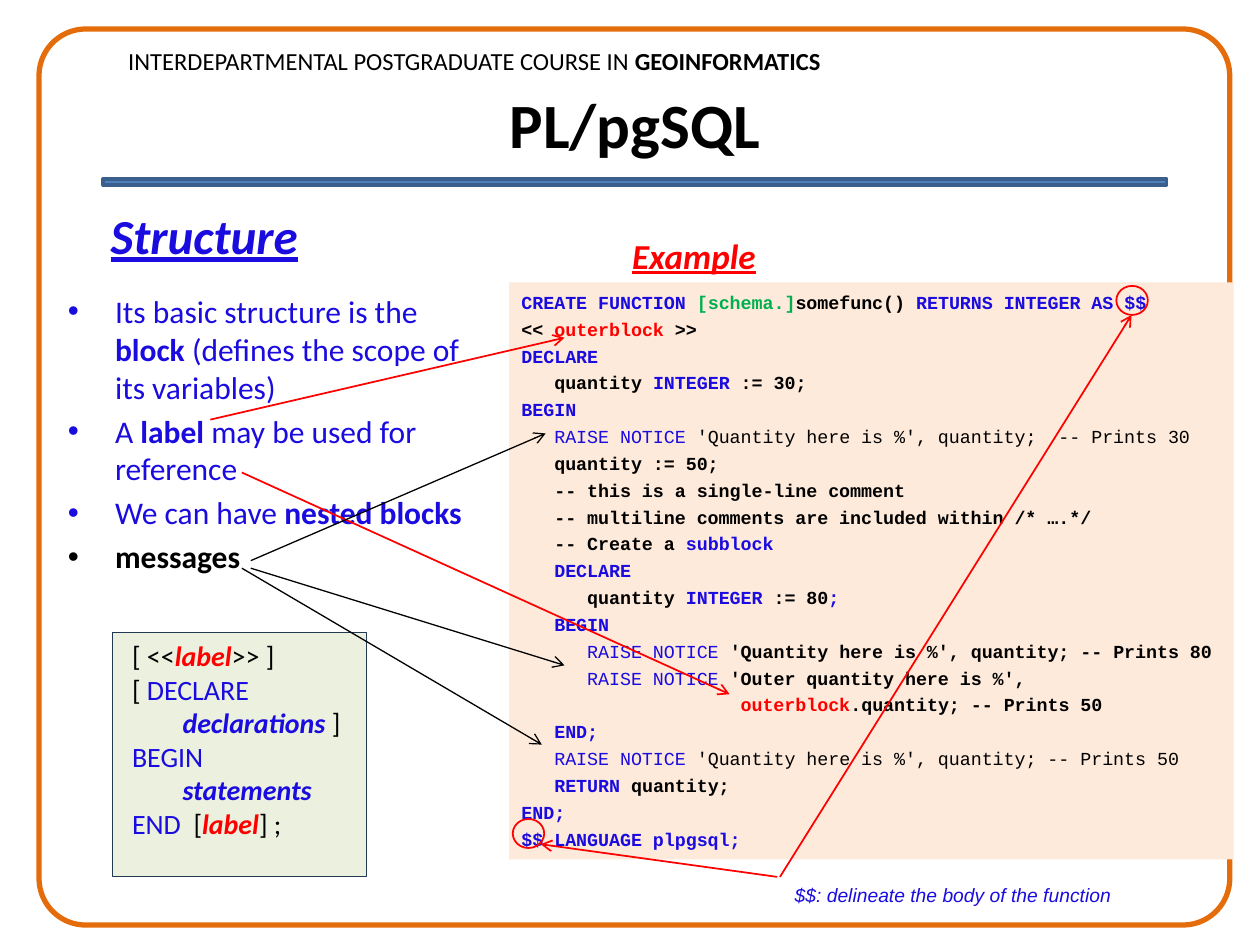
from typing import NamedTuple

from lxml import etree
from pptx import Presentation
from pptx.dml.color import RGBColor
from pptx.enum.shapes import MSO_CONNECTOR, MSO_SHAPE
from pptx.enum.text import MSO_ANCHOR, PP_ALIGN
from pptx.oxml.ns import qn
from pptx.util import Pt

STRAIGHT = MSO_CONNECTOR.STRAIGHT
RECT, ROUNDED, OVAL = MSO_SHAPE.RECTANGLE, MSO_SHAPE.ROUNDED_RECTANGLE, MSO_SHAPE.OVAL
LEFT, CENTER, RIGHT = PP_ALIGN.LEFT, PP_ALIGN.CENTER, PP_ALIGN.RIGHT
TOP, MIDDLE = MSO_ANCHOR.TOP, MSO_ANCHOR.MIDDLE

COLORS = {
    "black": "000000", "blue": "1A0BDF", "red": "FF0000", "green": "00B050",
    "orange": "E46C0A", "rule": "4F81BD", "rule_edge": "3A5F8C",
    "syntax": "EBF1DE", "syntax_edge": "233953", "code": "FDEADA",
}


class Style(NamedTuple):
    color: str
    bold: bool = False
    italic: bool = False


class Box(NamedTuple):
    left: float
    top: float
    width: float
    height: float


class Arrow(NamedTuple):
    start: tuple[float, float]
    end: tuple[float, float]
    color: str
    weight: float


Paragraph = list[tuple[str, Style]]

PLAIN, STRONG = Style("black"), Style("black", True)
BLUE, KEY = Style("blue"), Style("blue", True)
RED, GREEN = Style("red", True), Style("green", True)
NOTE, TERM, LABEL = Style("blue", False, True), Style("blue", True, True), Style("red", True, True)

SYNTAX: list[Paragraph] = [
    [("[ <<", PLAIN), ("label", LABEL), (">> ]", PLAIN)],
    [("[ ", PLAIN), ("DECLARE", BLUE)],
    [("        ", PLAIN), ("declarations", TERM), (" ]", PLAIN)],
    [("BEGIN", BLUE)],
    [("        ", BLUE), ("statements", TERM)],
    [("END  ", BLUE), ("[", PLAIN), ("label", LABEL), ("] ;", PLAIN)],
]
POINTS: list[Paragraph] = [
    [("Its basic structure is the ", BLUE), ("block ", KEY),
     ("(defines the scope of its variables)", BLUE)],
    [("A ", BLUE), ("label ", KEY), ("may be used for reference", BLUE)],
    [("We can have ", BLUE), ("nested blocks", KEY)],
    [("messages", STRONG)],
]
CODE: list[Paragraph] = [
    [("CREATE FUNCTION ", KEY), ("[schema.]", GREEN), ("somefunc() ", STRONG),
     ("RETURNS INTEGER AS $$", KEY)],
    [("<< ", STRONG), ("outerblock", RED), (" >>", STRONG)],
    [("DECLARE", KEY)],
    [("   quantity ", STRONG), ("INTEGER ", KEY), (":= 30;", STRONG)],
    [("BEGIN", KEY)],
    [("   RAISE NOTICE ", BLUE), ("'Quantity here is %', quantity;  -- Prints 30", PLAIN)],
    [("   quantity := 50;", STRONG)],
    [("   -- this is a single-line comment", STRONG)],
    [("   -- multiline comments are included within /* ….*/", STRONG)],
    [("   -- Create a ", STRONG), ("subblock", KEY)],
    [("   DECLARE", KEY)],
    [("      quantity", STRONG), (" INTEGER ", KEY), (":= 80", STRONG), (";", KEY)],
    [("   BEGIN", KEY)],
    [("      RAISE NOTICE ", BLUE), ("'Quantity here is %', quantity; -- Prints 80", STRONG)],
    [("      RAISE NOTICE ", BLUE), ("'Outer quantity here is %',", STRONG)],
    [("                    outerblock", RED), (".quantity; -- Prints 50", STRONG)],
    [("   END;", KEY)],
    [("   RAISE NOTICE", BLUE), (" 'Quantity here is %', quantity; -- Prints 50", PLAIN)],
    [("   RETURN", KEY), (" quantity;", STRONG)],
    [("END;", KEY)],
    [("$$ LANGUAGE plpgsql;", KEY)],
]
LABEL_AND_MESSAGE_ARROWS = [
    Arrow((120.2, 239.8), (322.6, 193), "red", 1),
    Arrow((138.2, 270), (416.9, 396.7), "red", 1),
    Arrow((143.3, 320.4), (311.8, 247.7), "black", 0.75),
    Arrow((138.2, 324.7), (309.6, 425.5), "black", 0.75),
    Arrow((143.3, 324.7), (322.6, 380.2), "black", 0.75),
]
DELIMITER_ARROWS = [
    Arrow((445.7, 501.1), (646.6, 180), "red", 1),
    Arrow((444.2, 501.1), (308.9, 482.4), "red", 1),
]
DELIMITER_RINGS = [Box(637.9, 163.4, 18, 16.6), Box(293, 468, 18, 16.6)]


def rgb(name: str) -> RGBColor:
    """Look up a named colour."""
    return RGBColor.from_string(COLORS[name])


def write_text(frame, paragraphs: list[Paragraph], *, size: float, font: str = "Calibri",
               align=LEFT, anchor=TOP, wrap: bool = True, underline: bool = False,
               gap: float = 0, bullet_indent: float = 0) -> None:
    """Fill a text frame with styled paragraphs."""
    frame.word_wrap = wrap
    frame.vertical_anchor = anchor
    for index, runs in enumerate(paragraphs):
        paragraph = frame.add_paragraph() if index else frame.paragraphs[0]
        if bullet_indent:
            properties = paragraph._p.get_or_add_pPr()
            properties.set("marL", str(Pt(bullet_indent)))
            properties.set("indent", str(-Pt(bullet_indent)))
            etree.SubElement(properties, qn("a:buFont")).set("typeface", "Arial")
            etree.SubElement(properties, qn("a:buChar")).set("char", "•")
        paragraph.alignment = align
        if index and gap:
            paragraph.space_before = Pt(gap)
        for text, style in runs:
            run = paragraph.add_run()
            run.text = text
            run.font.name, run.font.size = font, Pt(size)
            run.font.bold, run.font.italic = style.bold, style.italic
            run.font.underline = underline
            run.font.color.rgb = rgb(style.color)


def add_text(slide, box: Box, paragraphs: list[Paragraph], **text_format) -> None:
    """Place a text box and write into it."""
    write_text(slide.shapes.add_textbox(*map(Pt, box)).text_frame, paragraphs, **text_format)


def add_panel(slide, kind, box: Box, *, fill: str = "", edge: str = "", weight: float = 1):
    """Draw a preset shape with an optional fill and outline."""
    panel = slide.shapes.add_shape(kind, *map(Pt, box))
    panel.shadow.inherit = False
    if fill:
        panel.fill.solid()
        panel.fill.fore_color.rgb = rgb(fill)
    else:
        panel.fill.background()
    if edge:
        panel.line.color.rgb = rgb(edge)
        panel.line.width = Pt(weight)
    else:
        panel.line.fill.background()
    return panel


def add_arrow(slide, arrow: Arrow) -> None:
    """Draw a straight line with an open arrowhead at its end."""
    connector = slide.shapes.add_connector(
        STRAIGHT, *map(Pt, arrow.start), *map(Pt, arrow.end))
    connector.line.color.rgb = rgb(arrow.color)
    connector.line.width = Pt(arrow.weight)
    etree.SubElement(connector.line._get_or_add_ln(), qn("a:tailEnd")).set("type", "arrow")
    etree.SubElement(connector._element.spPr, qn("a:effectLst"))


def main() -> None:
    """Build the slide and save it."""
    deck = Presentation()
    deck.slide_width, deck.slide_height = Pt(720), Pt(540)
    slide = deck.slides.add_slide(deck.slide_layouts[6])

    add_text(slide, Box(66.2, 23, 413.3, 24.5),
             [[("INTERDEPARTMENTAL POSTGRADUATE COURSE IN ", PLAIN), ("GEOINFORMATICS", STRONG)]],
             size=14, wrap=False)
    add_panel(slide, RECT, Box(59, 102.2, 607.7, 3.6), fill="rule", edge="rule_edge", weight=2)
    border = add_panel(slide, ROUNDED, Box(22.3, 16.6, 680.4, 512), edge="orange", weight=3)
    border.adjustments[0] = 0.052
    add_panel(slide, RECT, Box(64.1, 361.4, 145.4, 139.7),
              fill="syntax", edge="syntax_edge", weight=0.75)
    add_text(slide, Box(38.9, 36, 648, 68.4), [[("PL/pgSQL", STRONG)]],
             size=36, align=CENTER, anchor=MIDDLE)
    add_text(slide, Box(68.4, 361.4, 185, 123.1), SYNTAX, size=16)
    add_text(slide, Box(56.2, 113.8, 141.8, 41), [[("Structure", TERM)]], size=28, underline=True)
    add_text(slide, Box(31.7, 163.4, 249.8, 221), POINTS, size=18, gap=3.5, bullet_indent=27)
    add_text(slide, Box(354.2, 130.3, 131.8, 31.7), [[("Example", LABEL)]],
             size=20, underline=True)
    listing = add_panel(slide, RECT, Box(290.9, 161.3, 414, 329.8), fill="code")
    listing.text_frame.margin_top = Pt(5)
    write_text(listing.text_frame, CODE, size=10.5, font="Courier New", gap=2.75)

    for arrow in LABEL_AND_MESSAGE_ARROWS:
        add_arrow(slide, arrow)
    for ring in DELIMITER_RINGS:
        add_panel(slide, OVAL, ring, edge="red")
    for arrow in DELIMITER_ARROWS:
        add_arrow(slide, arrow)
    add_text(slide, Box(445.7, 501.1, 196.6, 20.9),
             [[("$$: delineate the body of the function", NOTE)]],
             size=11, font="Arial", align=RIGHT, wrap=False)
    deck.save("out.pptx")


if __name__ == "__main__":
    main()
